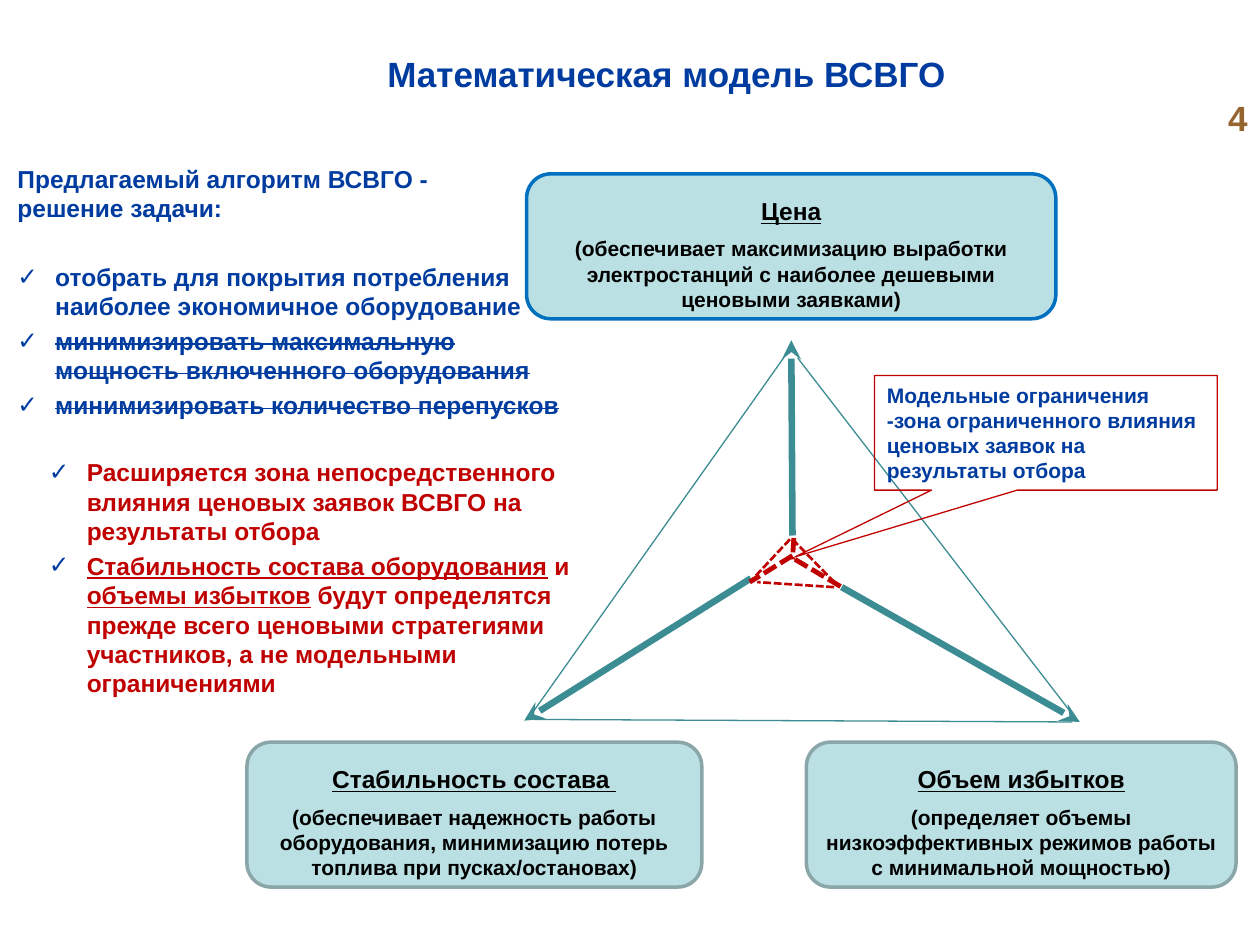
from lxml import etree
from pptx import Presentation
from pptx.dml.color import RGBColor
from pptx.enum.dml import MSO_LINE
from pptx.enum.shapes import MSO_CONNECTOR, MSO_SHAPE
from pptx.enum.text import MSO_ANCHOR, PP_ALIGN
from pptx.oxml.ns import qn
from pptx.util import Inches, Pt

STRAIGHT = MSO_CONNECTOR.STRAIGHT
ROUNDED, CALLOUT = MSO_SHAPE.ROUNDED_RECTANGLE, MSO_SHAPE.RECTANGULAR_CALLOUT
TOP, MIDDLE, BOTTOM = MSO_ANCHOR.TOP, MSO_ANCHOR.MIDDLE, MSO_ANCHOR.BOTTOM
LEFT, CENTER, RIGHT = PP_ALIGN.LEFT, PP_ALIGN.CENTER, PP_ALIGN.RIGHT
DASHED = MSO_LINE.SQUARE_DOT

COLUMNS, ROWS = 100, 75
CELL = Inches(0.1)
BULLET_INDENT = 3
COLORS = {
    "blue": "003CA0", "brown": "95642F", "black": "000000", "red": "C00000",
    "teal": "3C8C93", "pale": "BBE0E3", "bright": "0070C0", "gray": "8AA6A8",
}


def color(name):
    return RGBColor.from_string(COLORS[name])


def grid(*lengths):
    return [round(length * CELL) for length in lengths]


def set_frame(frame, anchor=TOP, top_margin=0.5):
    values = {"word_wrap": True, "vertical_anchor": anchor, "margin_top": grid(top_margin)[0]}
    for name, value in values.items():
        setattr(frame, name, value)


def add_bullet(paragraph):
    properties = paragraph._p.get_or_add_pPr()
    indent = grid(BULLET_INDENT)[0]
    properties.set("marL", str(indent))
    properties.set("indent", str(-indent))
    bullet_color = etree.SubElement(properties, qn("a:buClr"))
    etree.SubElement(bullet_color, qn("a:srgbClr"), val=COLORS["blue"])
    etree.SubElement(properties, qn("a:buFont"), typeface="Arial")
    etree.SubElement(properties, qn("a:buChar"), char="✓")


def add_run(paragraph, text, size, tint, underline=False, strike=False):
    for index, line in enumerate(text.split("\n")):
        if index:
            paragraph.add_line_break()
        run = paragraph.add_run()
        run.text = line
        values = {"name": "Arial", "size": Pt(size), "bold": True, "underline": underline}
        for name, value in values.items():
            setattr(run.font, name, value)
        run.font.color.rgb = color(tint)
        if strike:
            run._r.get_or_add_rPr().set("strike", "sngStrike")


def fill_text(frame, paragraphs, size, tint, align=LEFT):
    for index, (runs, layout) in enumerate(paragraphs):
        paragraph = frame.add_paragraph() if index else frame.paragraphs[0]
        paragraph.alignment = align
        if index:
            paragraph.space_before = Pt(layout.get("before", 3))
        if layout.get("bullet"):
            add_bullet(paragraph)
        for text, style in runs:
            add_run(paragraph, text, **{"size": size, "tint": tint, **style})


def add_text(slide, box, paragraphs, size, tint, align=LEFT, anchor=TOP):
    frame = slide.shapes.add_textbox(*grid(*box)).text_frame
    set_frame(frame, anchor)
    fill_text(frame, paragraphs, size, tint, align)


def add_header(slide, box):
    left, top, width, height = box
    title_left, title_width = 12.2, 81.4
    number_left = title_left + title_width
    add_text(slide, (left + title_left, top, title_width, height),
             [([("Математическая модель ВСВГО", {})], {})], 20, "blue", CENTER, MIDDLE)
    add_text(slide, (left + number_left, top + 6, width - number_left, 5.5),
             [([("4", {})], {})], 20, "brown", RIGHT, BOTTOM)


def add_algorithm(slide, box):
    item = {"bullet": True}
    struck = {"strike": True}
    add_text(slide, box, [
        ([("Предлагаемый алгоритм ВСВГО -\nрешение задачи:", {})], {}),
        ([("отобрать для покрытия потребления наиболее экономичное оборудование", {})],
         {"bullet": True, "before": 22.5}),
        ([("минимизировать максимальную мощность включенного оборудования", struck)], item),
        ([("минимизировать количество перепусков", struck)], item),
    ], 14, "blue")


def add_consequences(slide, box):
    item = {"bullet": True}
    underlined = {"underline": True}
    add_text(slide, box, [
        ([("Расширяется зона непосредственного влияния ценовых заявок ВСВГО "
           "на результаты отбора", {})], item),
        ([("Стабильность состава оборудования", underlined), (" и ", {}),
          ("объемы избытков", underlined),
          (" будут определятся прежде всего ценовыми стратегиями участников, "
           "а не модельными ограничениями", {})], item),
    ], 14, "red")


def add_criterion(slide, box, heading, detail, border):
    shape = slide.shapes.add_shape(ROUNDED, *grid(*box))
    shape.shadow.inherit = False
    shape.fill.solid()
    shape.fill.fore_color.rgb = color("pale")
    shape.line.color.rgb = color(border)
    shape.line.width = Pt(2)
    set_frame(shape.text_frame, top_margin=1.2)
    fill_text(shape.text_frame, [
        ([(heading, {"size": 14, "underline": True})], {}),
        ([(detail, {})], {"before": 6}),
    ], 12, "black", CENTER)


def add_line(slide, start, end, tint, width, dashed=False, arrow=False):
    connector = slide.shapes.add_connector(STRAIGHT, *grid(*start, *end))
    connector.line.color.rgb = color(tint)
    connector.line.width = Pt(width)
    if dashed:
        connector.line.dash_style = DASHED
    if arrow:
        etree.SubElement(connector.line._get_or_add_ln(), qn("a:tailEnd"), type="stealth")
    etree.SubElement(connector._element.spPr, qn("a:effectLst"))


def add_triangle(slide, box):
    left, top, width, height = box
    groups = [
        ({"tint": "teal", "width": 3.75, "arrow": True}, [
            (25.2, 19.6, width, height), (21.3, 15.5, 21.2, 0), (18, 18.9, 0, 30.2)]),
        ({"tint": "teal", "width": 0.75}, [
            (20.6, 1.4, 0.5, 29.8), (43.6, 29.8, 21.7, 1.4), (43.5, 30.3, 0.8, 30.1)]),
        ({"tint": "red", "width": 1.5, "dashed": True}, [
            (21.1, 15.8, 18.1, 19), (21.3, 15.8, 24.9, 19.5), (24.6, 19.6, 18.5, 19.2)]),
        ({"tint": "red", "width": 2.75, "dashed": True}, [
            (21.4, 15.7, 21.3, 17.4), (21.3, 17.1, 17.9, 19.2), (21.5, 17.4, 25.2, 19.6)]),
    ]
    for style, segments in groups:
        for x1, y1, x2, y2 in segments:
            add_line(slide, (left + x1, top + y1), (left + x2, top + y2), **style)


def add_limits_callout(slide, box, tip):
    left, top, width, height = box
    shape = slide.shapes.add_shape(CALLOUT, *grid(*box))
    shape.shadow.inherit = False
    shape.adjustments[0] = (tip[0] - left) / width - 0.5
    shape.adjustments[1] = (tip[1] - top) / height - 0.5
    shape.fill.background()
    shape.line.color.rgb = color("red")
    shape.line.width = Pt(0.75)
    set_frame(shape.text_frame, MIDDLE)
    fill_text(shape.text_frame, [
        ([("Модельные ограничения\n-зона ограниченного влияния ценовых заявок "
           "на результаты отбора", {})], {}),
    ], 12, "blue")


def main():
    presentation = Presentation()
    presentation.slide_width, presentation.slide_height = grid(COLUMNS, ROWS)
    slide = presentation.slides.add_slide(presentation.slide_layouts[6])
    add_header(slide, (0, 0, COLUMNS, 11.6))
    criteria = [
        ((41.8, 13.8, 42, 11.5), "Цена",
         "(обеспечивает максимизацию выработки электростанций с наиболее дешевыми "
         "ценовыми заявками)", "bright"),
        ((19.6, 58.9, 36.1, 11.5), "Стабильность состава ",
         "(обеспечивает надежность работы оборудования, минимизацию потерь топлива "
         "при пусках/остановах)", "gray"),
        ((64, 58.9, 34.1, 11.5), "Объем избытков",
         "(определяет объемы низкоэффективных режимов работы с минимальной мощностью)", "gray"),
    ]
    for criterion in criteria:
        add_criterion(slide, *criterion)
    add_triangle(slide, (41.6, 27, 44.1, 30.3))
    add_algorithm(slide, (0.4, 12.5, 45.4, 25.3))
    add_consequences(slide, (2.9, 35.8, 45.5, 25.3))
    add_limits_callout(slide, (69.4, 29.8, 27.2, 9.1), (63.1, 44.2))
    presentation.save("out.pptx")


if __name__ == "__main__":
    main()
